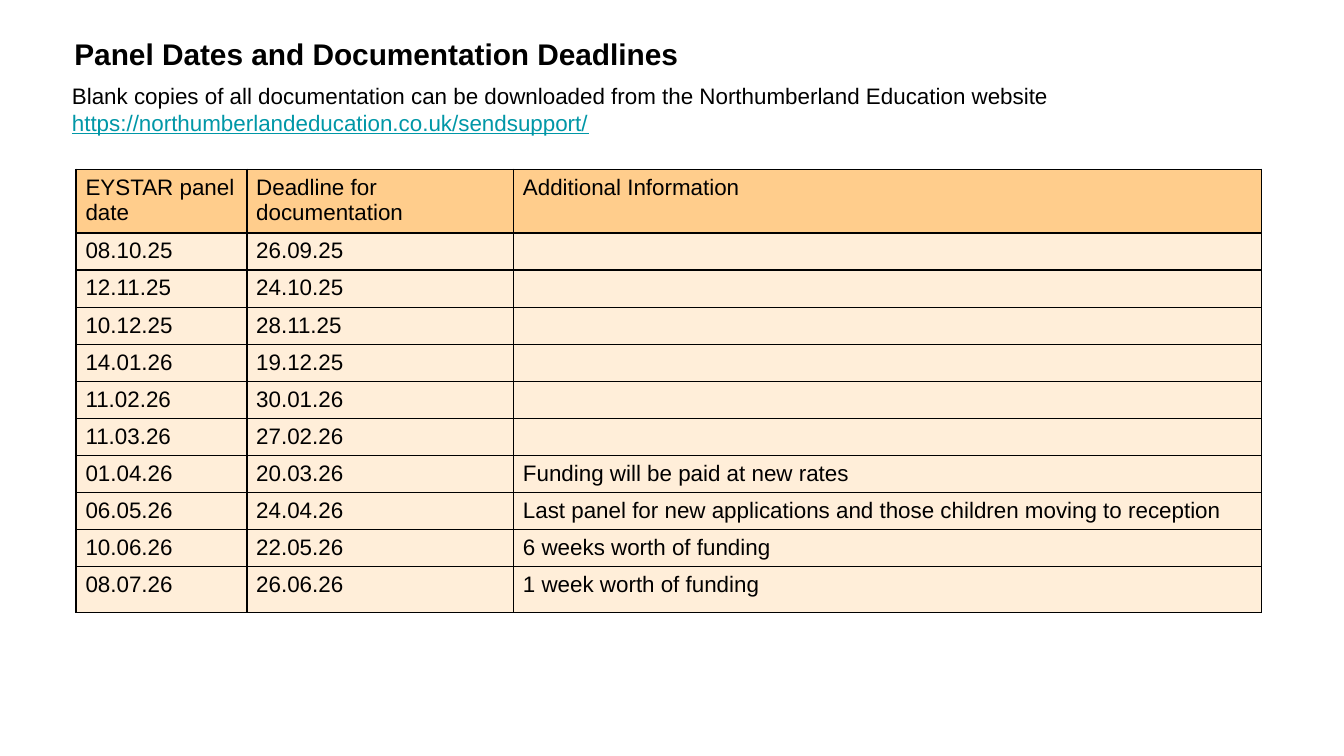
from dataclasses import dataclass

from lxml.etree import SubElement
from pptx import Presentation
from pptx.dml.color import RGBColor
from pptx.enum.shapes import MSO_SHAPE
from pptx.enum.text import MSO_ANCHOR, PP_ALIGN
from pptx.oxml.ns import qn
from pptx.util import Inches, Pt


@dataclass(frozen=True)
class Theme:
    font: str = "Arial"
    ink: str = "000000"
    paper: str = "FFFFFF"
    link: str = "0097A7"
    header: str = "FFCD8C"
    body: str = "FFEED9"
    title_size: int = 16
    text_size: int = 12
    border: int = 1


THEME = Theme()
WIDTH = Inches(10)
HEIGHT = WIDTH * 9 // 16
INSET_X, INSET_Y = Inches(0.07), Inches(0.04)
COLUMNS = (12.7, 19.85, 55.65)
HEADER_ROW, DATE_ROW, LAST_ROW = 8.46, 4.9, 6.08

HEADINGS = ("EYSTAR panel date", "Deadline for documentation", "Additional Information")
PANELS = (
    ("08.10.25", "26.09.25", ""),
    ("12.11.25", "24.10.25", ""),
    ("10.12.25", "28.11.25", ""),
    ("14.01.26", "19.12.25", ""),
    ("11.02.26", "30.01.26", ""),
    ("11.03.26", "27.02.26", ""),
    ("01.04.26", "20.03.26", "Funding will be paid at new rates"),
    ("06.05.26", "24.04.26", "Last panel for new applications and those children moving to reception"),
    ("10.06.26", "22.05.26", "6 weeks worth of funding"),
    ("08.07.26", "26.06.26", "1 week worth of funding"),
)


def across(percent):
    return round(WIDTH * percent / 100)


def down(percent):
    return round(HEIGHT * percent / 100)


def box(x, y, w, h):
    return across(x), down(y), across(w), down(h)


def color(value):
    return RGBColor.from_string(value)


def set_insets(item):
    item.margin_left = item.margin_right = INSET_X
    item.margin_top = item.margin_bottom = INSET_Y


def style(p, size, bold=False):
    p.alignment = PP_ALIGN.LEFT
    p.font.name = THEME.font
    p.font.size = Pt(size)
    p.font.bold = bold
    p.font.color.rgb = color(THEME.ink)


def add_title(slide, text, place):
    sp = slide.shapes.add_shape(MSO_SHAPE.RECTANGLE, *place)
    sp.shadow.inherit = False
    sp.fill.solid()
    sp.fill.fore_color.rgb = color(THEME.paper)
    sp.line.fill.background()
    tf = sp.text_frame
    tf.word_wrap = True
    tf.vertical_anchor = MSO_ANCHOR.MIDDLE
    set_insets(tf)
    p = tf.paragraphs[0]
    p.text = text
    style(p, THEME.title_size, bold=True)


def add_note(slide, text, address, place):
    tf = slide.shapes.add_textbox(*place).text_frame
    tf.word_wrap = True
    set_insets(tf)
    p = tf.paragraphs[0]
    style(p, THEME.text_size)
    p.add_run().text = text
    r = p.add_run()
    r.text = address
    r.font.underline = True
    r.font.color.rgb = color(THEME.link)


def add_borders(cell):
    tc_pr = cell._tc.get_or_add_tcPr()
    for i, side in enumerate(("lnL", "lnR", "lnT", "lnB")):
        ln = tc_pr.makeelement(qn(f"a:{side}"), {"w": str(Pt(THEME.border))})
        fill = SubElement(ln, qn("a:solidFill"))
        SubElement(fill, qn("a:srgbClr"), val=THEME.ink)
        tc_pr.insert(i, ln)


def fill_cell(cell, text, fill):
    set_insets(cell)
    cell.fill.solid()
    cell.fill.fore_color.rgb = color(fill)
    add_borders(cell)
    p = cell.text_frame.paragraphs[0]
    p.text = text
    style(p, THEME.text_size)
    if not text:
        SubElement(p._p, qn("a:endParaRPr"), sz=str(THEME.text_size * 100))


def add_schedule(slide, x, y):
    rows = (HEADINGS, *PANELS)
    heights = (HEADER_ROW, *[DATE_ROW] * (len(PANELS) - 1), LAST_ROW)
    place = box(x, y, sum(COLUMNS), sum(heights))
    table = slide.shapes.add_table(len(rows), len(COLUMNS), *place).table
    for column, width in zip(table.columns, COLUMNS):
        column.width = across(width)
    for i, (texts, height) in enumerate(zip(rows, heights)):
        table.rows[i].height = down(height)
        fill = THEME.body if i else THEME.header
        for j, text in enumerate(texts):
            fill_cell(table.cell(i, j), text, fill)


def main():
    prs = Presentation()
    prs.slide_width, prs.slide_height = WIDTH, HEIGHT
    slide = prs.slides.add_slide(prs.slide_layouts[6])
    add_title(slide, "Panel Dates and Documentation Deadlines", box(4.84, 3.9, 89.6, 6.25))
    add_schedule(slide, 5.67, 22.4)
    add_note(
        slide,
        "Blank copies of all documentation can be downloaded from the Northumberland Education website ",
        "https://northumberlandeducation.co.uk/sendsupport/",
        box(4.65, 10.15, 90.5, 11.75),
    )
    prs.save("out.pptx")


if __name__ == "__main__":
    main()
